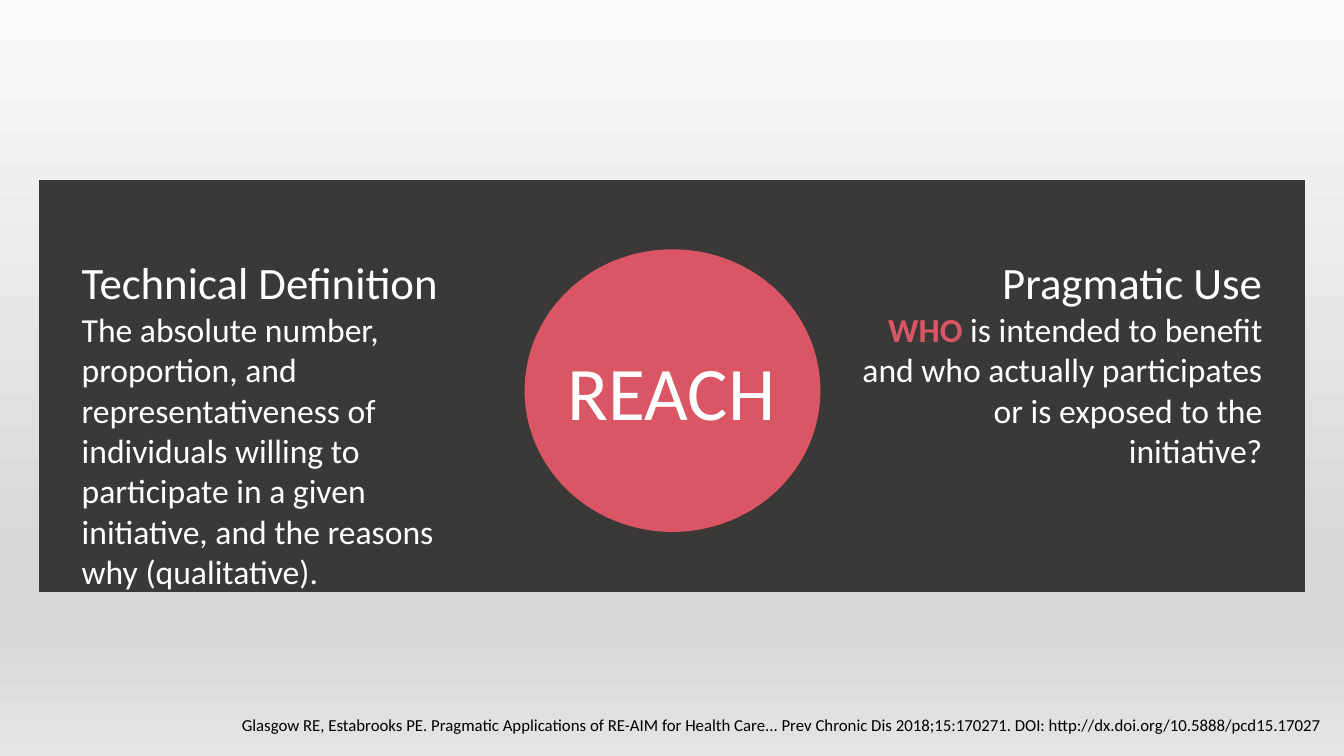
"""Build the REACH definition slide."""
from copy import deepcopy
from dataclasses import dataclass

from lxml.etree import SubElement
from pptx import Presentation
from pptx.dml.color import RGBColor
from pptx.enum.shapes import MSO_SHAPE as Preset
from pptx.enum.text import MSO_ANCHOR as Anchor, MSO_AUTO_SIZE as AutoSize, PP_ALIGN as Align
from pptx.oxml.ns import qn
from pptx.util import Inches, Pt

FONT = "Calibri"
WHITE = RGBColor(0xFF, 0xFF, 0xFF)
BLACK = RGBColor(0x00, 0x00, 0x00)
CHARCOAL = RGBColor(0x3B, 0x38, 0x38)
CORAL = RGBColor(0xDA, 0x56, 0x64)
BACKDROP = [(0, "FAFAFA"), (74, "D7D7D7"), (83, "D7D7D7"), (100, "E4E4E4")]


@dataclass(frozen=True)
class Area:
    left: float
    top: float
    width: float
    height: float

    def lengths(self) -> list:
        return [Inches(side) for side in (self.left, self.top, self.width, self.height)]


@dataclass(frozen=True)
class Span:
    text: str
    size: int
    color: RGBColor = WHITE
    bold: bool = False


@dataclass(frozen=True)
class Block:
    area: Area
    align: Align
    paragraphs: list[list[Span]]


@dataclass(frozen=True)
class Panel:
    preset: Preset
    area: Area
    color: RGBColor


PANELS = [
    Panel(Preset.RECTANGLE, Area(0.39, 1.79, 12.55, 4.08), CHARCOAL),
    Panel(Preset.OVAL, Area(5.21, 2.48, 2.92, 2.79), CORAL),
]
HEADING = Block(Area(5.53, 3.37, 2.27, 1.01), Align.LEFT, [[Span("REACH", 54)]])
TECHNICAL = Block(Area(0.71, 2.48, 4.17, 3.47), Align.LEFT, [
    [Span("Technical Definition", 32)],
    [Span("The absolute number, proportion, and representativeness of individuals willing to "
          "participate in a given initiative, and the reasons why (qualitative).", 24)],
])
PRAGMATIC = Block(Area(8.45, 2.48, 4.17, 2.26), Align.RIGHT, [
    [Span("Pragmatic Use", 32)],
    [Span("WHO", 24, CORAL, True),
     Span(" is intended to benefit and who actually participates or is exposed to the initiative?", 24)],
])
CITATION = Block(Area(2.3, 7.04, 11, 0.3), Align.LEFT, [
    [Span("Glasgow RE, Estabrooks PE. Pragmatic Applications of RE-AIM for Health Care... "
          "Prev Chronic Dis 2018;15:170271. DOI: http://dx.doi.org/10.5888/pcd15.17027", 12, BLACK)],
])


def paint_backdrop(page) -> None:
    fill = page.background.fill
    fill.gradient()
    fill.gradient_angle = 270
    stop_list = page.background._cSld.find(".//" + qn("a:gsLst"))
    template = deepcopy(stop_list[0])
    for stop in list(stop_list):
        stop_list.remove(stop)
    for percent, color in BACKDROP:
        stop = deepcopy(template)
        stop.set("pos", str(percent * 1000))
        for child in list(stop):
            stop.remove(child)
        SubElement(stop, qn("a:srgbClr"), val=color)
        stop_list.append(stop)


def draw_panel(page, panel: Panel) -> None:
    shape = page.shapes.add_shape(panel.preset, *panel.area.lengths())
    shape.shadow.inherit = False
    shape.fill.solid()
    shape.fill.fore_color.rgb = panel.color
    shape.line.color.rgb = panel.color
    shape.line.width = Pt(1)
    page.shapes.title.element.addprevious(shape.element)


def write_block(box, block: Block) -> None:
    box.left, box.top, box.width, box.height = block.area.lengths()
    frame = box.text_frame
    frame.word_wrap = True
    frame.auto_size = AutoSize.NONE
    frame.vertical_anchor = Anchor.TOP
    for index, spans in enumerate(block.paragraphs):
        para = frame.add_paragraph() if index else frame.paragraphs[0]
        para.alignment = block.align
        para.line_spacing = 1.0
        para.space_before = Pt(0)
        properties = para._p.get_or_add_pPr()
        properties.set("marL", "0")
        properties.set("indent", "0")
        SubElement(properties, qn("a:buNone"))
        for span in spans:
            run = para.add_run()
            run.text = span.text
            run.font.name = FONT
            run.font.size = Pt(span.size)
            run.font.bold = span.bold
            run.font.color.rgb = span.color


def main() -> None:
    deck = Presentation()
    deck.slide_width, deck.slide_height = Inches(13.33), Inches(7.5)
    page = deck.slides.add_slide(deck.slide_layouts.get_by_name("Two Content"))
    paint_backdrop(page)
    for panel in PANELS:
        draw_panel(page, panel)
    heading, technical, pragmatic = page.placeholders
    citation = page.shapes.add_textbox(*CITATION.area.lengths())
    for box, block in [(heading, HEADING), (technical, TECHNICAL),
                       (pragmatic, PRAGMATIC), (citation, CITATION)]:
        write_block(box, block)
    deck.save("out.pptx")


if __name__ == "__main__":
    main()
